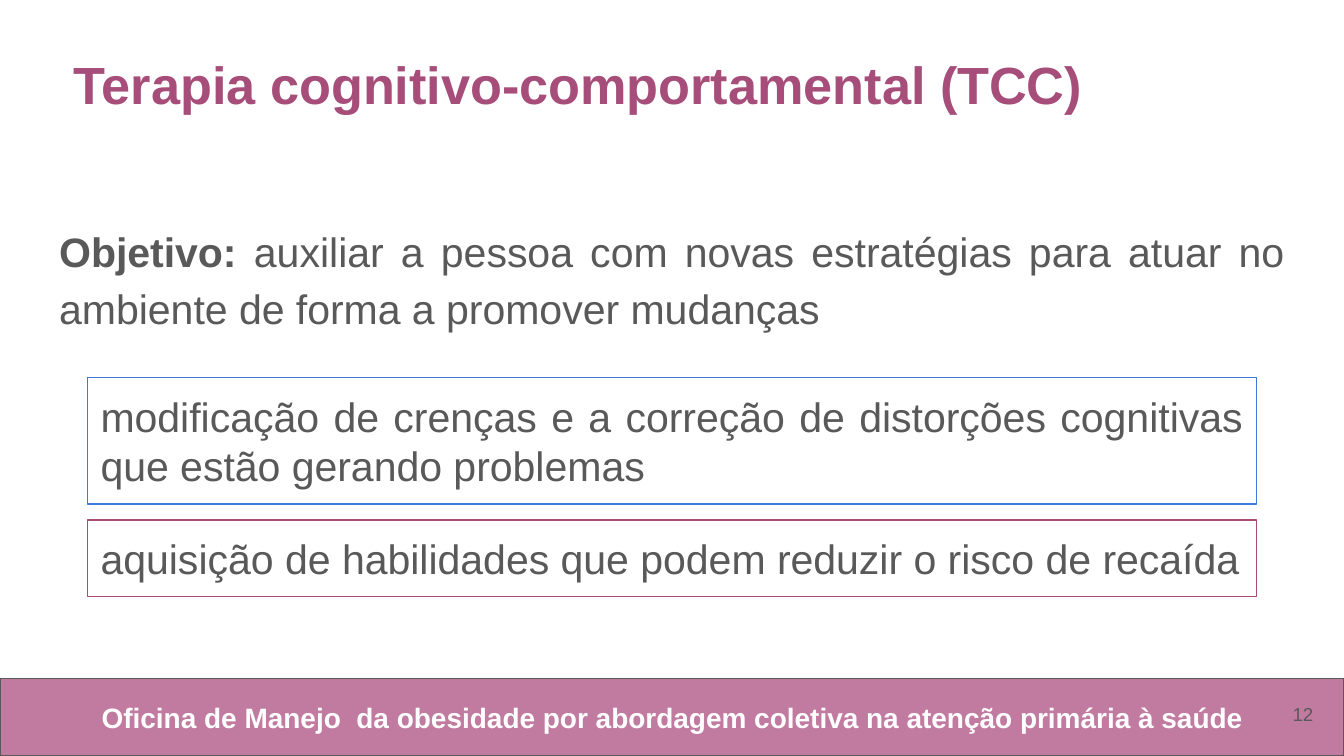
from dataclasses import dataclass

from lxml.etree import SubElement
from pptx import Presentation
from pptx.dml.color import RGBColor
from pptx.enum.shapes import MSO_SHAPE
from pptx.enum.text import MSO_ANCHOR, MSO_AUTO_SIZE, PP_ALIGN
from pptx.oxml.ns import qn
from pptx.shapes.autoshape import Shape
from pptx.slide import Slide
from pptx.text.text import TextFrame, _Paragraph
from pptx.util import Inches, Pt

PLUM = RGBColor(0xA6, 0x4D, 0x79)
PINK = RGBColor(0xC2, 0x7B, 0xA0)
BLUE = RGBColor(0x3C, 0x78, 0xD8)
GRAY = RGBColor(0x59, 0x59, 0x59)
WHITE = RGBColor(0xFF, 0xFF, 0xFF)
FONT = "Arial"
INSET = Inches(0.1)
PAGE_WIDTH = 10
PAGE_HEIGHT = PAGE_WIDTH * 9 / 16
FOOTER_TOP = 5.05


@dataclass(frozen=True)
class Area:
    left: float
    top: float
    width: float
    height: float

    def lengths(self) -> tuple[int, int, int, int]:
        return (Inches(self.left), Inches(self.top),
                Inches(self.width), Inches(self.height))


@dataclass(frozen=True)
class GoalBox:
    text: str
    area: Area
    outline: RGBColor


GOALS = (
    GoalBox("modificação de crenças e a correção de distorções cognitivas "
            "que estão gerando problemas", Area(0.65, 2.81, 8.7, 0.94), BLUE),
    GoalBox("aquisição de habilidades que podem reduzir o risco de recaída",
            Area(0.65, 3.87, 8.7, 0.57), PLUM),
)


def prepare_frame(frame: TextFrame, anchor: MSO_ANCHOR = MSO_ANCHOR.TOP) -> _Paragraph:
    """Set wrapping, insets and anchor; return the first paragraph."""
    frame.word_wrap = True
    frame.auto_size = MSO_AUTO_SIZE.NONE
    frame.vertical_anchor = anchor
    frame.margin_left = frame.margin_right = INSET
    frame.margin_top = frame.margin_bottom = INSET
    return frame.paragraphs[0]


def style_paragraph(para: _Paragraph, size: float, color: RGBColor,
                    align: PP_ALIGN, bold: bool | None = False) -> None:
    para.alignment = align
    para.font.name = FONT
    para.font.size = Pt(size)
    para.font.color.rgb = color
    para.font.bold = bold


def place(shape: Shape, area: Area) -> None:
    shape.left, shape.top, shape.width, shape.height = area.lengths()


def add_rectangle(page: Slide, area: Area, outline: RGBColor,
                  fill: RGBColor | None = None) -> Shape:
    box = page.shapes.add_shape(MSO_SHAPE.RECTANGLE, *area.lengths())
    box.shadow.inherit = False
    if fill is None:
        box.fill.background()
    else:
        box.fill.solid()
        box.fill.fore_color.rgb = fill
    box.line.color.rgb = outline
    box.line.width = Pt(0.75)
    return box


def add_label(page: Slide, text: str, area: Area, size: float, color: RGBColor,
              align: PP_ALIGN, bold: bool = False,
              anchor: MSO_ANCHOR = MSO_ANCHOR.TOP) -> None:
    label = page.shapes.add_textbox(*area.lengths())
    para = prepare_frame(label.text_frame, anchor)
    para.text = text
    style_paragraph(para, size, color, align, bold)


def fill_title(title: Shape) -> None:
    place(title, Area(0.34, 0.29, 7.98, 0.63))
    para = prepare_frame(title.text_frame)
    title.text_frame.margin_left = Inches(0.21)
    para.text = "Terapia cognitivo-comportamental (TCC)"
    style_paragraph(para, 28, PLUM, PP_ALIGN.LEFT, True)


def fill_objective(body: Shape) -> None:
    place(body, Area(0.34, 1.53, 9.32, 1.04))
    para = prepare_frame(body.text_frame)
    para.line_spacing = 1.15
    para.space_before = Pt(0)
    properties = para._p.get_or_add_pPr()
    properties.set("marL", "0")
    properties.set("indent", "0")
    SubElement(properties, qn("a:buNone"))
    style_paragraph(para, 22, GRAY, PP_ALIGN.JUSTIFY, None)
    heading = para.add_run()
    heading.text = "Objetivo: "
    heading.font.bold = True
    para.add_run().text = ("auxiliar a pessoa com novas estratégias para atuar no "
                           "ambiente de forma a promover mudanças")


def add_goal(page: Slide, goal: GoalBox) -> None:
    box = add_rectangle(page, goal.area, goal.outline)
    para = prepare_frame(box.text_frame)
    para.text = goal.text
    style_paragraph(para, 22, GRAY, PP_ALIGN.JUSTIFY)


def main() -> None:
    deck = Presentation()
    deck.slide_width, deck.slide_height = Inches(PAGE_WIDTH), Inches(PAGE_HEIGHT)
    page = deck.slides.add_slide(deck.slide_layouts[1])

    fill_title(page.shapes.title)
    fill_objective(page.placeholders[1])
    for goal in GOALS:
        add_goal(page, goal)

    footer = Area(0, FOOTER_TOP, PAGE_WIDTH, PAGE_HEIGHT - FOOTER_TOP)
    add_rectangle(page, footer, GRAY, PINK)
    add_label(page, "Oficina de Manejo  da obesidade por abordagem coletiva "
              "na atenção primária à saúde", Area(0.34, 5.11, 9.33, 0.45),
              15, WHITE, PP_ALIGN.CENTER, bold=True)
    add_label(page, "12", Area(9.27, 5.1, 0.6, 0.43), 10, GRAY,
              PP_ALIGN.RIGHT, anchor=MSO_ANCHOR.MIDDLE)

    deck.save("out.pptx")


if __name__ == "__main__":
    main()
